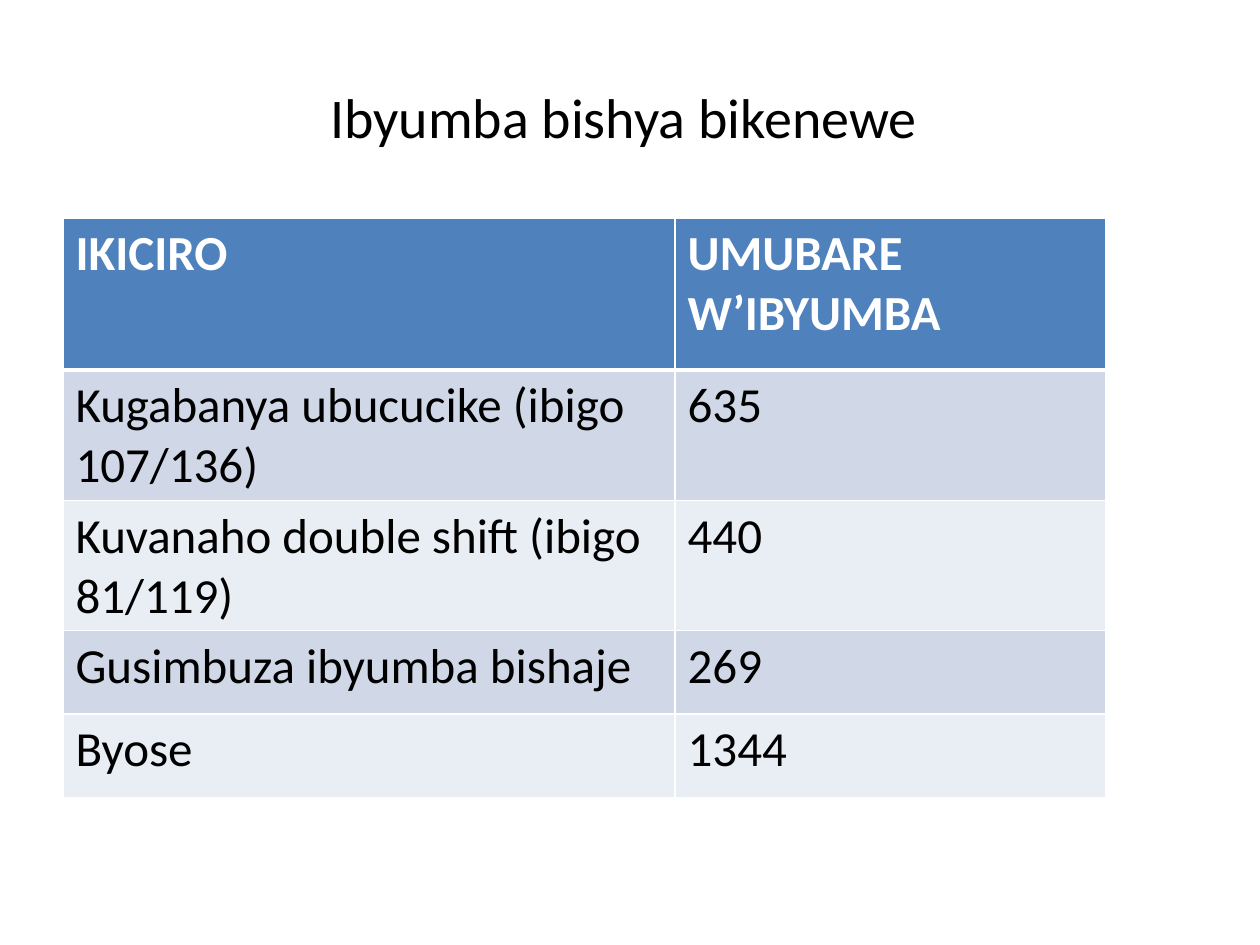
from lxml import etree
from pptx import Presentation
from pptx.dml.color import RGBColor
from pptx.enum.text import MSO_ANCHOR, PP_ALIGN
from pptx.oxml.ns import qn
from pptx.util import Cm, Pt

MIDDLE = MSO_ANCHOR.MIDDLE
CENTER = PP_ALIGN.CENTER

TITLE = "Ibyumba bishya bikenewe "
ROWS = [
    ("IKICIRO", "UMUBARE W’IBYUMBA"),
    ("Kugabanya ubucucike (ibigo 107/136)", "635"),
    ("Kuvanaho double shift (ibigo 81/119)", "440"),
    ("Gusimbuza ibyumba bishaje", "269"),
    ("Byose", "1344"),
]
COLUMN_WIDTHS = (12.34, 8.69)
HEADER_HEIGHT, ROW_HEIGHT = 3.07, 1.68
FONT = "Calibri"
BLACK, WHITE = "000000", "FFFFFF"
HEADER_FILL = "4F81BD"
BAND_FILLS = ("D0D8E8", "E9EDF4")


def rgb(value):
    return RGBColor.from_string(value)


def add_span(para, text, size, color, bold=False):
    span = para.add_run()
    span.text = text
    span.font.name = FONT
    span.font.size = Pt(size)
    span.font.bold = bold
    span.font.color.rgb = rgb(color)


def add_borders(cell, bottom_width):
    """Draw white cell borders; they must precede the fill in the cell XML."""
    properties = cell._tc.get_or_add_tcPr()
    widths = {"a:lnL": 1, "a:lnR": 1, "a:lnT": 1, "a:lnB": bottom_width}
    for position, (tag, width) in enumerate(widths.items()):
        line = etree.Element(qn(tag), w=str(Pt(width)))
        fill = etree.SubElement(line, qn("a:solidFill"))
        etree.SubElement(fill, qn("a:srgbClr"), val=WHITE)
        properties.insert(position, line)


def add_title(page):
    box = page.shapes.add_textbox(Cm(1.27), Cm(0.76), Cm(22.86), Cm(3.18))
    frame = box.text_frame
    frame.word_wrap = True
    frame.vertical_anchor = MIDDLE
    para = frame.paragraphs[0]
    para.alignment = CENTER
    add_span(para, TITLE, 32, BLACK)


def add_room_table(page):
    heights = [HEADER_HEIGHT] + [ROW_HEIGHT] * (len(ROWS) - 1)
    table = page.shapes.add_table(
        len(ROWS), len(COLUMN_WIDTHS), Cm(1.27), Cm(4.39),
        Cm(sum(COLUMN_WIDTHS)), Cm(sum(heights))).table
    for column, width in zip(table.columns, COLUMN_WIDTHS):
        column.width = Cm(width)
    for r, (texts, height) in enumerate(zip(ROWS, heights)):
        table.rows[r].height = Cm(height)
        header = r == 0
        for c, text in enumerate(texts):
            cell = table.cell(r, c)
            cell.fill.solid()
            cell.fill.fore_color.rgb = rgb(
                HEADER_FILL if header else BAND_FILLS[(r - 1) % 2])
            # The line below the header is shared with the first body row.
            add_borders(cell, 3 if header else 1)
            if r == 1:
                cell._tc.tcPr.find(qn("a:lnT")).set("w", str(Pt(3)))
            add_span(cell.text_frame.paragraphs[0], text, 28,
                     WHITE if header else BLACK, bold=header)


def main():
    deck = Presentation()
    deck.slide_width, deck.slide_height = Cm(25.4), Cm(19.05)
    page = deck.slides.add_slide(deck.slide_layouts[6])
    add_title(page)
    add_room_table(page)
    deck.save("out.pptx")


if __name__ == "__main__":
    main()
